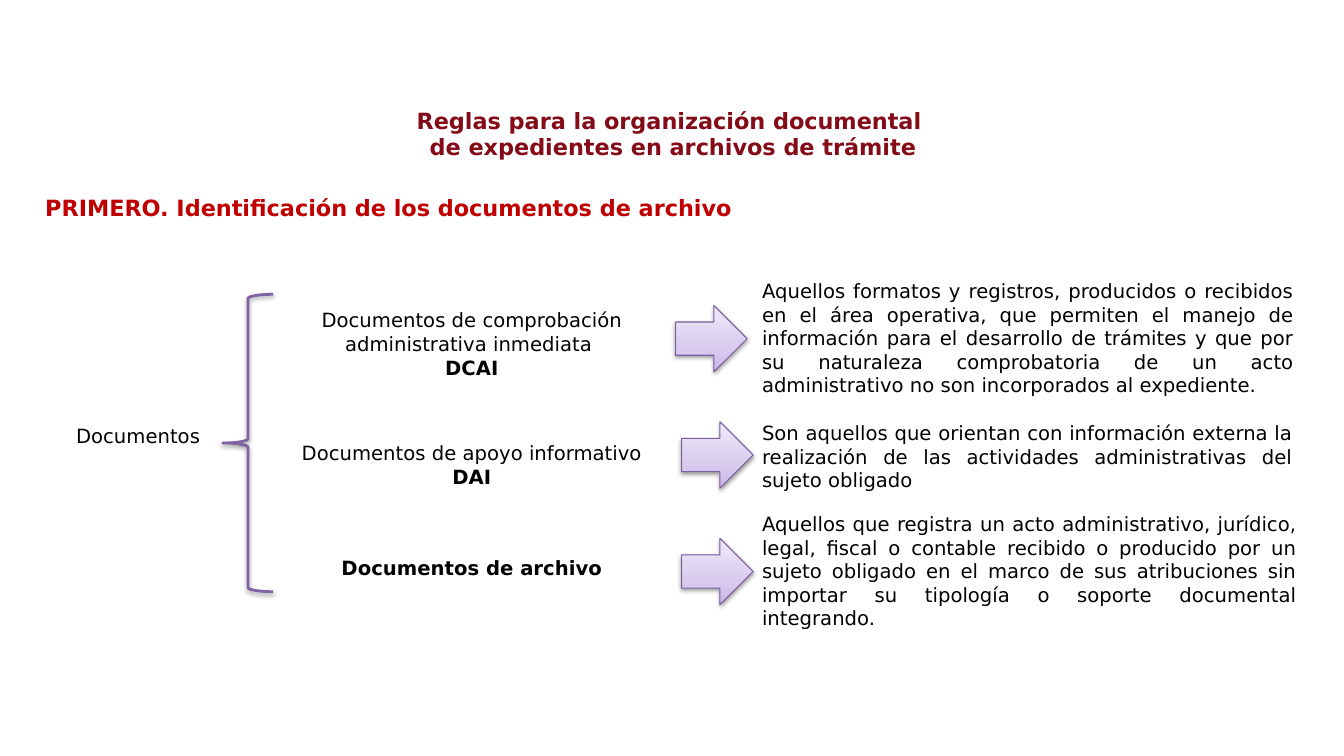
from copy import deepcopy
from pptx import Presentation
from pptx import util as u
from pptx.dml.color import RGBColor
from pptx.enum import shapes, text
from pptx.oxml import parse_xml
from pptx.oxml.ns import nsdecls, qn

THEME = {
    "font": "DejaVu Sans", "heading_size": 16, "body_size": 14,
    "title": "840C18", "section": "C00000", "body": "000000",
    "brace": "8064A2", "arrow_line": "7D60A0",
    "arrow_stops": [(0, "C9B5E8"), (0.35, "D8CBEE"), (1, "F0EAF9")],
}
# Columns: left edge and width
ROOT, BRACE, KIND, MEANING = (0.53, 1.68), (2.21, 0.5), (2.71, 3.94), 7.46
ARROW_WIDTH, ARROW_HEIGHT = 0.71, 0.66
ARROW_TOP, ARROW_PITCH = 3.03, 1.155

deck = Presentation()
deck.slide_width, deck.slide_height = u.Inches(13.33), u.Inches(7.5)
page = deck.slides.add_slide(deck.slide_layouts[6])


def add_text(place, lines, align, size="body_size", color="body", bold_from=9):
    """Add a text box whose lines are bold from the given index on."""
    box = page.shapes.add_textbox(*map(u.Inches, place))
    frame = box.text_frame
    frame.word_wrap = True
    frame.auto_size = text.MSO_AUTO_SIZE.SHAPE_TO_FIT_TEXT
    frame.text = "\n".join(lines)
    for index, para in enumerate(frame.paragraphs):
        para.alignment = align
        for span in para.runs:
            span.font.name = THEME["font"]
            span.font.size = u.Pt(THEME[size])
            span.font.bold = index >= bold_from
            span.font.color.rgb = RGBColor.from_string(THEME[color])


def add_outlined(preset, place, color, weight):
    """Add a preset shape with a coloured outline and a soft shadow below."""
    shape = page.shapes.add_shape(preset, *map(u.Inches, place))
    shape.line.color.rgb = RGBColor.from_string(THEME[color])
    shape.line.width = u.Pt(weight)
    shape.fill.background()
    shape._element.spPr.append(parse_xml(
        f'<a:effectLst {nsdecls("a")}><a:outerShdw blurRad="40000" dist="20000" '
        'dir="5400000" rotWithShape="0"><a:srgbClr val="000000">'
        '<a:alpha val="38000"/></a:srgbClr></a:outerShdw></a:effectLst>'))
    return shape


# Headings
center, left, justify = text.PP_ALIGN.CENTER, text.PP_ALIGN.LEFT, text.PP_ALIGN.JUSTIFY
add_text((1.18, 1.01, 10.99, 0.64),
         ["Reglas para la organización documental ", "de expedientes en archivos de trámite"],
         center, "heading_size", "title", 0)
add_text((0.35, 1.88, 12.61, 0.37),
         ["PRIMERO. Identificación de los documentos de archivo"],
         left, "heading_size", "section", 0)

# Root of the classification and its brace
add_text((ROOT[0], 4.16, ROOT[1], 0.34), ["Documentos"], center)
add_outlined(shapes.MSO_SHAPE.LEFT_BRACE, (BRACE[0], 2.92, BRACE[1], 2.95), "brace", 2)

# Rows: kind (top, height, lines, first bold line), arrow left, meaning (top, width, height, text)
rows = [
    ((3.01, 0.81, ["Documentos de comprobación administrativa inmediata ", "DCAI"], 1), 6.7,
     (2.72, 5.47, 1.28,
      "Aquellos formatos y registros, producidos o recibidos en el área operativa, que "
      "permiten el manejo de información para el desarrollo de trámites y que por su "
      "naturaleza comprobatoria de un acto administrativo no son incorporados al expediente.")),
    ((4.33, 0.57, ["Documentos de apoyo informativo", "DAI"], 1), 6.76,
     (4.13, 5.46, 0.81,
      "Son aquellos que orientan con información externa la realización de las "
      "actividades administrativas del sujeto obligado")),
    ((5.47, 0.34, ["Documentos de archivo"], 0), 6.76,
     (5.03, 5.5, 1.28,
      "Aquellos que registra un acto administrativo, jurídico, legal, fiscal o contable "
      "recibido o producido por un sujeto obligado en el marco de sus atribuciones sin "
      "importar su tipología o soporte documental integrando.")),
]
for row, (kind, arrow_left, meaning) in enumerate(rows):
    kind_top, kind_height, lines, bold_from = kind
    add_text((KIND[0], kind_top, KIND[1], kind_height), lines, center, bold_from=bold_from)

    meaning_top, meaning_width, meaning_height, wording = meaning
    add_text((MEANING, meaning_top, meaning_width, meaning_height), [wording], justify)

    # Arrow with a three-stop gradient, lightest at the top
    arrow = add_outlined(
        shapes.MSO_SHAPE.RIGHT_ARROW,
        (arrow_left, ARROW_TOP + row * ARROW_PITCH, ARROW_WIDTH, ARROW_HEIGHT),
        "arrow_line", 0.75)
    arrow.fill.gradient()
    arrow.fill.gradient_angle = 90
    stop_list = arrow._element.spPr.find(".//" + qn("a:gsLst"))
    stop_list.insert(1, deepcopy(stop_list[0]))
    for stop, (position, color) in zip(arrow.fill.gradient_stops, THEME["arrow_stops"]):
        stop.position = position
        stop.color.rgb = RGBColor.from_string(color)

deck.save("out.pptx")
